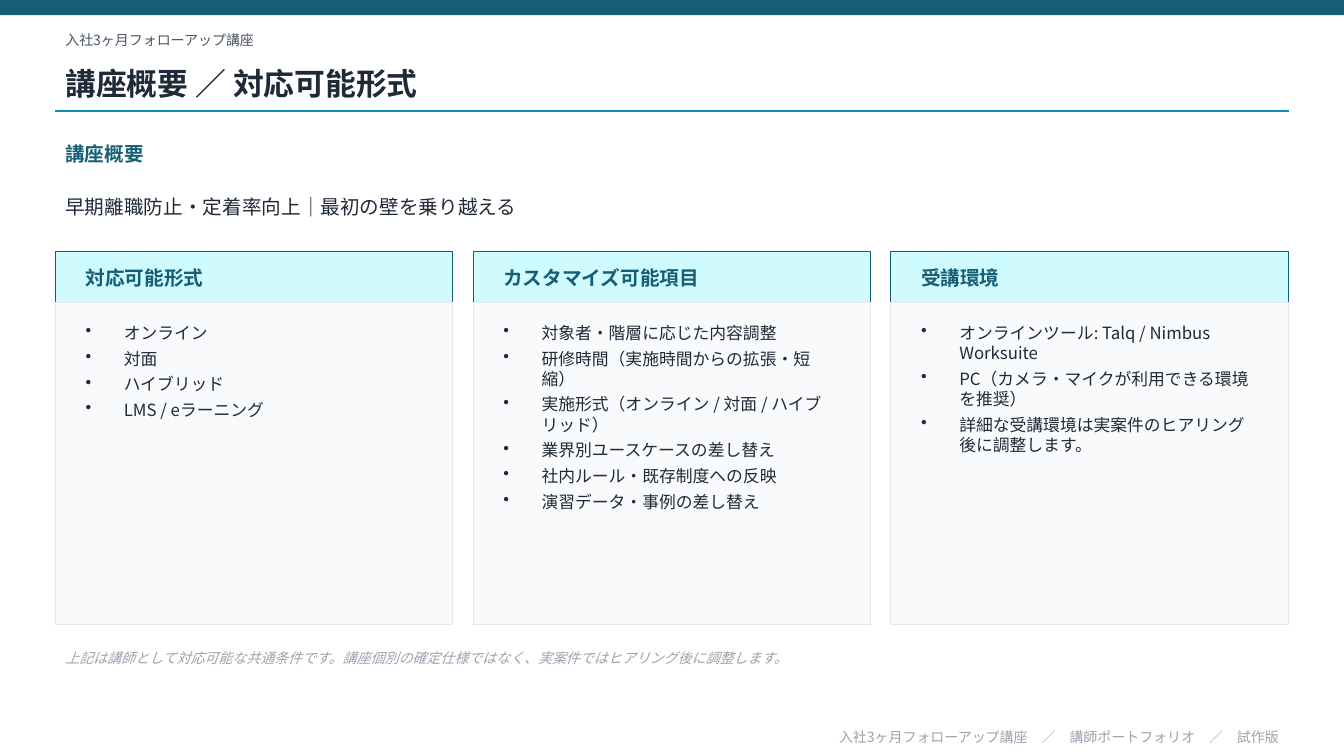
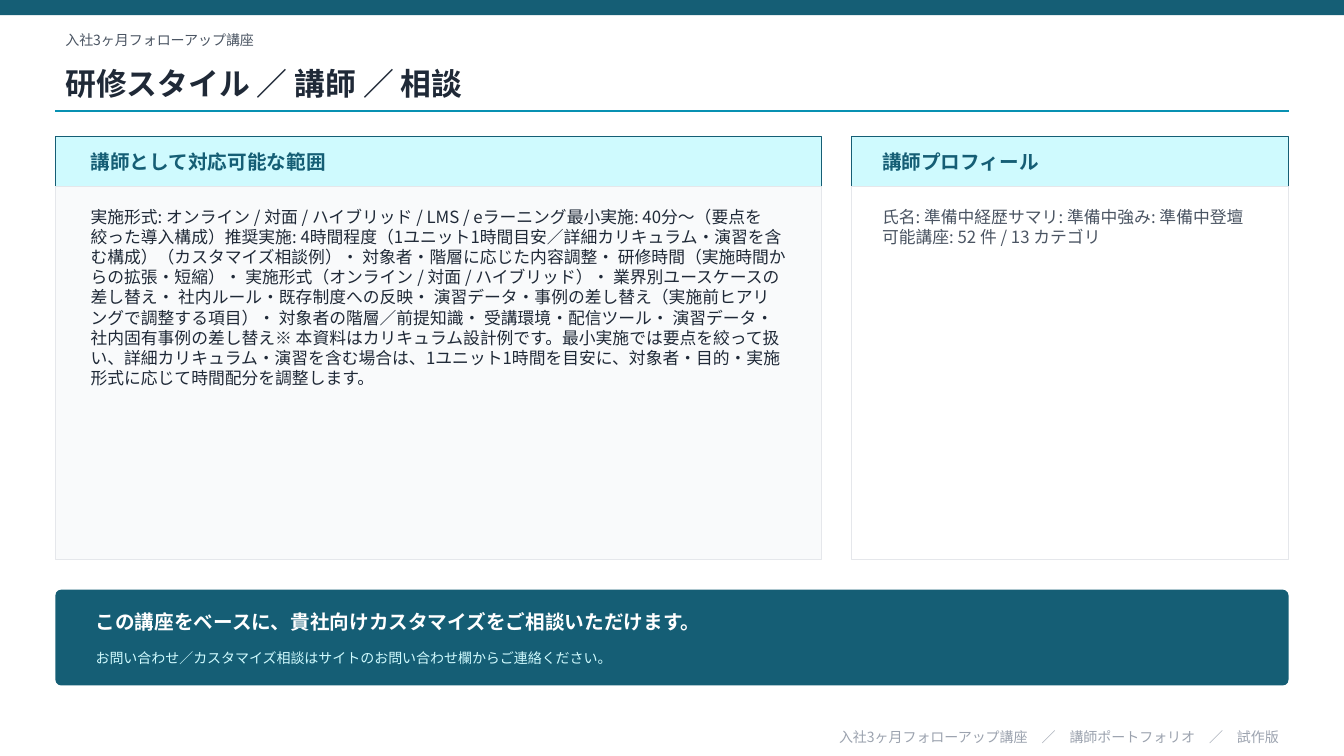
from dataclasses import dataclass
from typing import NamedTuple

from lxml.etree import SubElement
from pptx import Presentation
from pptx.dml.color import RGBColor
from pptx.enum.shapes import MSO_CONNECTOR, MSO_SHAPE
from pptx.enum.text import MSO_ANCHOR, PP_ALIGN
from pptx.oxml.ns import qn
from pptx.util import Inches, Pt


@dataclass(frozen=True)
class Theme:
    font: str = "Noto Sans CJK JP"
    primary: str = "155E75"
    accent: str = "0891B2"
    tint: str = "CFFAFE"
    ink: str = "1F2937"
    muted: str = "4B5563"
    faint: str = "9CA3AF"
    panel: str = "F9FAFB"
    border: str = "E5E7EB"
    white: str = "FFFFFF"
    title_size: int = 22
    heading_size: int = 14
    body_size: int = 12
    small_size: int = 10


class Box(NamedTuple):
    left: float
    top: float
    width: float
    height: float

    def inches(self):
        return [Inches(length) for length in self]

    def row(self, offset, height, indent=0):
        """Return a strip of this box, narrowed on both sides by indent."""
        return Box(self.left + indent, self.top + offset, self.width - 2 * indent, height)


THEME = Theme()
SLIDE_WIDTH, SLIDE_HEIGHT = 13.33, 7.5
MARGIN = 0.55
CONTENT = Box(MARGIN, 0, SLIDE_WIDTH - 2 * MARGIN, SLIDE_HEIGHT)
CARD_HEADER = 0.5
BULLET_INDENT = Inches(0.38)

COURSE = "入社3ヶ月フォローアップ講座"
FOOTER = f"{COURSE}　／　講師ポートフォリオ　／　試作版"

FORMAT_CARDS = [
    ("対応可能形式", ["オンライン", "対面", "ハイブリッド", "LMS / eラーニング"]),
    ("カスタマイズ可能項目", [
        "対象者・階層に応じた内容調整",
        "研修時間（実施時間からの拡張・短縮）",
        "実施形式（オンライン / 対面 / ハイブリッド）",
        "業界別ユースケースの差し替え",
        "社内ルール・既存制度への反映",
        "演習データ・事例の差し替え",
    ]),
    ("受講環境", [
        "オンラインツール: Talq / Nimbus Worksuite",
        "PC（カメラ・マイクが利用できる環境を推奨）",
        "詳細な受講環境は実案件のヒアリング後に調整します。",
    ]),
]
SCOPE = (
    "実施形式: オンライン / 対面 / ハイブリッド / LMS / eラーニング"
    "最小実施: 40分〜（要点を絞った導入構成）"
    "推奨実施: 4時間程度（1ユニット1時間目安／詳細カリキュラム・演習を含む構成）"
    "（カスタマイズ相談例）・ 対象者・階層に応じた内容調整"
    "・ 研修時間（実施時間からの拡張・短縮）"
    "・ 実施形式（オンライン / 対面 / ハイブリッド）"
    "・ 業界別ユースケースの差し替え・ 社内ルール・既存制度への反映"
    "・ 演習データ・事例の差し替え"
    "（実施前ヒアリングで調整する項目）・ 対象者の階層／前提知識"
    "・ 受講環境・配信ツール・ 演習データ・社内固有事例の差し替え"
    "※ 本資料はカリキュラム設計例です。最小実施では要点を絞って扱い、"
    "詳細カリキュラム・演習を含む場合は、1ユニット1時間を目安に、"
    "対象者・目的・実施形式に応じて時間配分を調整します。"
)
PROFILE = (
    "氏名: 準備中経歴サマリ: 準備中強み: 準備中"
    "登壇可能講座: 52 件 / 13 カテゴリ"
)


def add_panel(slide, box, fill, line=None, kind=MSO_SHAPE.RECTANGLE):
    shape = slide.shapes.add_shape(kind, *box.inches())
    shape.shadow.inherit = False
    shape.fill.solid()
    shape.fill.fore_color.rgb = RGBColor.from_string(fill)
    if line:
        shape.line.color.rgb = RGBColor.from_string(line)
        shape.line.width = Pt(0.75)
    else:
        shape.line.fill.background()
    return shape


def add_bullet(paragraph):
    properties = paragraph._p.get_or_add_pPr()
    properties.set("marL", str(BULLET_INDENT))
    properties.set("indent", str(-BULLET_INDENT))
    SubElement(properties, qn("a:buChar"), char="•")


def add_text(slide, box, lines, size, color, bold=False, italic=False,
             align=PP_ALIGN.LEFT, anchor=MSO_ANCHOR.MIDDLE, space_after=None, bullets=False):
    text_frame = slide.shapes.add_textbox(*box.inches()).text_frame
    text_frame.word_wrap = True
    text_frame.vertical_anchor = anchor
    text_frame.text = "\n".join(lines)
    for paragraph in text_frame.paragraphs:
        paragraph.alignment = align
        if space_after is not None:
            paragraph.space_after = Pt(space_after)
        if bullets:
            add_bullet(paragraph)
        for run in paragraph.runs:
            font = run.font
            font.size = Pt(size)
            font.bold = bold
            font.italic = italic
            font.color.rgb = RGBColor.from_string(color)
            font.name = THEME.font
            SubElement(run._r.get_or_add_rPr(), qn("a:ea"), typeface=THEME.font)


def add_rule(slide, box):
    left, top, width, _ = box.inches()
    connector = slide.shapes.add_connector(MSO_CONNECTOR.STRAIGHT, left, top, left + width, top)
    connector.line.color.rgb = RGBColor.from_string(THEME.accent)
    connector.line.width = Pt(1)
    SubElement(connector._element.spPr, qn("a:effectLst"))


def add_heading(slide, box, text, color=THEME.primary):
    add_text(slide, box, [text], THEME.heading_size, color, bold=True)


def add_base_slide(presentation, title):
    """Add a slide with the top band, title block and footer."""
    slide = presentation.slides.add_slide(presentation.slide_layouts[6])
    slide.background.fill.solid()
    slide.background.fill.fore_color.rgb = RGBColor.from_string(THEME.white)
    add_panel(slide, Box(0, 0, SLIDE_WIDTH, 0.15), THEME.primary)
    add_text(slide, CONTENT.row(0.25, 0.3), [COURSE], THEME.small_size, THEME.muted)
    add_text(slide, CONTENT.row(0.55, 0.55), [title], THEME.title_size, THEME.ink, bold=True)
    add_rule(slide, CONTENT.row(1.1, 0))
    add_text(slide, CONTENT.row(7.2, 0.22), [FOOTER], THEME.small_size, THEME.faint,
             align=PP_ALIGN.RIGHT)
    return slide


def add_card(slide, box, heading, lines, indent=0.2, fill=THEME.panel, color=THEME.ink,
             space_after=4, bullets=False):
    header = box.row(0, CARD_HEADER)
    body = box.row(CARD_HEADER, box.height - CARD_HEADER)
    add_panel(slide, header, THEME.tint, THEME.primary)
    add_heading(slide, header.row(0, header.height, indent), heading)
    add_panel(slide, body, fill, THEME.border)
    add_text(slide, body.row(0.15, body.height - 0.35, indent), lines, THEME.body_size, color,
             anchor=MSO_ANCHOR.TOP, space_after=space_after, bullets=bullets)


def add_card_row(slide, box, cards, gap=0.2):
    width = (box.width - gap * (len(cards) - 1)) / len(cards)
    for index, (heading, lines) in enumerate(cards):
        card = Box(box.left + index * (width + gap), box.top, width, box.height)
        add_card(slide, card, heading, lines, bullets=True)


def add_contact_banner(slide, box, message, detail):
    banner = add_panel(slide, box, THEME.primary, kind=MSO_SHAPE.ROUNDED_RECTANGLE)
    banner.adjustments[0] = 0.06
    add_heading(slide, box.row(0.12, 0.4, 0.3), message, THEME.white)
    add_text(slide, box.row(0.5, 0.35, 0.3), [detail], THEME.small_size, THEME.tint)


def add_overview_slide(presentation):
    slide = add_base_slide(presentation, "講座概要 ／ 対応可能形式")
    add_heading(slide, CONTENT.row(1.35, 0.35), "講座概要")
    add_text(slide, CONTENT.row(1.75, 0.6), ["早期離職防止・定着率向上｜最初の壁を乗り越える"],
             THEME.heading_size, THEME.ink)
    add_card_row(slide, CONTENT.row(2.5, 3.7), FORMAT_CARDS)
    note = ("上記は講師として対応可能な共通条件です。"
            "講座個別の確定仕様ではなく、実案件ではヒアリング後に調整します。")
    add_text(slide, CONTENT.row(6.35, 0.35), [note], THEME.small_size, THEME.faint, italic=True)


def add_consultation_slide(presentation):
    slide = add_base_slide(presentation, "研修スタイル ／ 講師 ／ 相談")
    area = CONTENT.row(1.35, 4.2)
    scope_width, gap = 7.6, 0.3
    scope = area._replace(width=scope_width)
    profile = area._replace(left=area.left + scope_width + gap,
                            width=area.width - scope_width - gap)
    add_card(slide, scope, "講師として対応可能な範囲", [SCOPE], indent=0.25, space_after=2)
    add_card(slide, profile, "講師プロフィール", [PROFILE], fill=THEME.white, color=THEME.muted)
    add_contact_banner(slide, CONTENT.row(5.85, 0.95),
                       "この講座をベースに、貴社向けカスタマイズをご相談いただけます。",
                       "お問い合わせ／カスタマイズ相談はサイトのお問い合わせ欄からご連絡ください。")


def main():
    presentation = Presentation()
    presentation.slide_width = Inches(SLIDE_WIDTH)
    presentation.slide_height = Inches(SLIDE_HEIGHT)
    add_overview_slide(presentation)
    add_consultation_slide(presentation)
    presentation.save("out.pptx")


if __name__ == "__main__":
    main()
